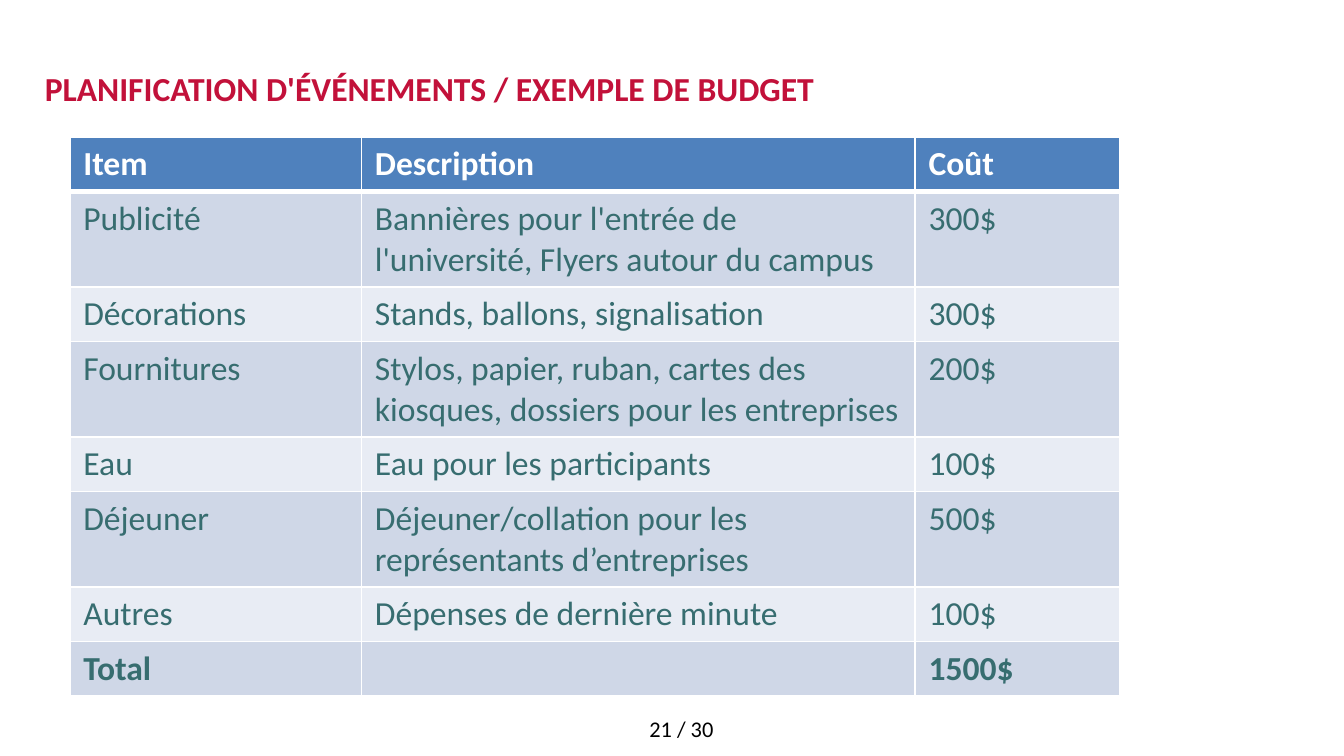
from typing import NamedTuple

from lxml import etree
from pptx import Presentation
from pptx import util as u
from pptx.dml.color import RGBColor
from pptx.enum import text
from pptx.oxml.ns import qn

WIDTH = 10
HEIGHT = WIDTH * 9 / 16
RED, TEAL, BLUE, WHITE = "C2113A", "376D70", "4F81BD", "FFFFFF"
BANDS = ("CFD7E7", "E8ECF4")
COLUMNS = (2.17, 4.12, 1.52)
ROW, TALL_ROW = 0.38, 0.65


class Line(NamedTuple):
    item: str
    description: str
    cost: str
    tall: bool = False
    bold: bool = False


BUDGET = [
    Line("Item", "Description", "Coût", bold=True),
    Line("Publicité", "Bannières pour l'entrée de l'université, Flyers autour du campus",
         "300$", tall=True),
    Line("Décorations", "Stands, ballons, signalisation", "300$"),
    Line("Fournitures",
         "Stylos, papier, ruban, cartes des kiosques, dossiers pour les entreprises",
         "200$", tall=True),
    Line("Eau", "Eau pour les participants", "100$"),
    Line("Déjeuner", "Déjeuner/collation pour les représentants d’entreprises",
         "500$", tall=True),
    Line("Autres", "Dépenses de dernière minute", "100$"),
    Line("Total", "", "1500$", bold=True),
]


def rgb(color: str) -> RGBColor:
    return RGBColor.from_string(color)


def place(sp, x: float, y: float, w: float, h: float) -> None:
    """Position a shape by percentages of the slide's size."""
    sp.left, sp.width = u.Inches(x * WIDTH / 100), u.Inches(w * WIDTH / 100)
    sp.top, sp.height = u.Inches(y * HEIGHT / 100), u.Inches(h * HEIGHT / 100)


def write(tf, words: str, *, size: float = 18, color: str = TEAL,
          bold: bool = False, align=None):
    p = tf.paragraphs[0]
    p.alignment = align
    if words:
        r = p.add_run()
        r.text = words
        r.font.name, r.font.size, r.font.bold = "Calibri", u.Pt(size), bold
        r.font.color.rgb = rgb(color)
    return p


def set_borders(cell, bottom: float = 1) -> None:
    """White rules; they must precede the fill in the cell properties."""
    tc_pr = cell._tc.get_or_add_tcPr()
    for i, (side, width) in enumerate(zip("LRTB", (1, 1, 1, bottom))):
        ln = etree.Element(qn(f"a:ln{side}"), w=str(u.Pt(width)))
        fill = etree.SubElement(ln, qn("a:solidFill"))
        etree.SubElement(fill, qn("a:srgbClr"), val=WHITE)
        tc_pr.insert(i, ln)


def add_budget(slide, lines: list[Line]) -> None:
    heights = [TALL_ROW if line.tall else ROW for line in lines]
    table = slide.shapes.add_table(
        len(lines), len(COLUMNS), u.Inches(0.52), u.Inches(1.02),
        u.Inches(sum(COLUMNS)), u.Inches(sum(heights))).table
    for column, width in zip(table.columns, COLUMNS):
        column.width = u.Inches(width)
    for i, (line, height) in enumerate(zip(lines, heights)):
        table.rows[i].height = u.Inches(height)
        header = i == 0
        for cell, words in zip(table.rows[i].cells, line[:3]):
            cell.fill.solid()
            cell.fill.fore_color.rgb = rgb(BLUE if header else BANDS[(i - 1) % 2])
            set_borders(cell, bottom=3 if header else 1)
            write(cell.text_frame, words, bold=line.bold,
                  color=WHITE if header else TEAL)


prs = Presentation()
prs.slide_width, prs.slide_height = u.Inches(WIDTH), u.Inches(HEIGHT)
s = prs.slides.add_slide(prs.slide_layouts[5])

# Title
title = s.shapes.title
place(title, 3.33, 5.16, 93.3, 13.5)
title.fill.solid()
title.fill.fore_color.rgb = rgb(WHITE)
tf = title.text_frame
tf.auto_size = text.MSO_AUTO_SIZE.NONE
tf.vertical_anchor = text.MSO_ANCHOR.MIDDLE
tf.margin_left = tf.margin_right = tf.margin_top = tf.margin_bottom = 0
p = write(tf, "PLANIFICATION D'ÉVÉNEMENTS / EXEMPLE DE BUDGET", color=RED,
          bold=True, align=text.PP_ALIGN.JUSTIFY)
p.line_spacing = u.Pt(20)

# Budget table
add_budget(s, BUDGET)

# Page number
page = s.shapes.add_textbox(0, 0, 0, 0)
place(page, 43.75, 93.69, 13.9, 5.5)
page.text_frame.word_wrap = True
write(page.text_frame, "21 / 30", size=12, color="000000",
      align=text.PP_ALIGN.CENTER)

prs.save("out.pptx")
